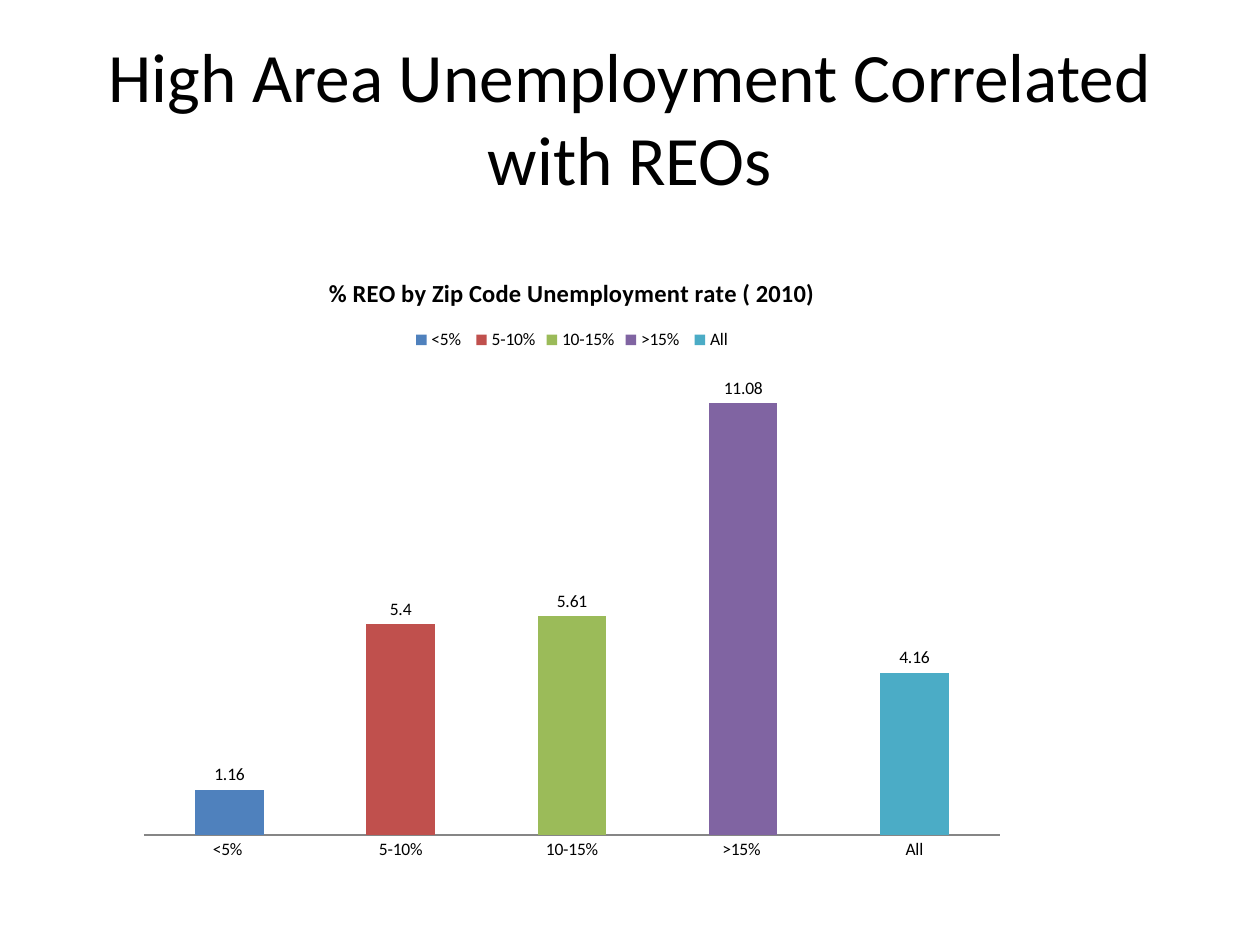
from pptx import Presentation
from pptx import util as u
from pptx.chart import data
from pptx.dml.color import RGBColor
from pptx.enum import chart as ch, text

BLACK = RGBColor(0, 0, 0)
GREY = RGBColor(0x86, 0x86, 0x86)
BARS = [
    ("<5% ", 1.16, RGBColor(0x4F, 0x81, 0xBD)),
    ("5-10%", 5.4, RGBColor(0xC0, 0x50, 0x4D)),
    ("10-15%", 5.61, RGBColor(0x9B, 0xBB, 0x59)),
    (">15% ", 11.08, RGBColor(0x80, 0x64, 0xA2)),
    ("All", 4.16, RGBColor(0x4B, 0xAC, 0xC6)),
]
FONT = "Calibri"


def style(font, size, bold=False):
    font.name = FONT
    font.size = u.Pt(size)
    font.bold = bold
    font.color.rgb = BLACK


prs = Presentation()
prs.slide_width, prs.slide_height = u.Cm(25.4), u.Cm(19.05)
slide = prs.slides.add_slide(prs.slide_layouts[5])

# Slide title
title = slide.shapes.title
title.left, title.top = u.Cm(1.27), u.Cm(0.76)
title.width, title.height = u.Cm(22.86), u.Cm(3.18)
frame = title.text_frame
frame.word_wrap = True
frame.vertical_anchor = text.MSO_ANCHOR.MIDDLE
para = frame.paragraphs[0]
para.alignment = text.PP_ALIGN.CENTER
run = para.add_run()
run.text = "High Area Unemployment Correlated with REOs"
style(run.font, 39.6)

# Column chart
rates = data.CategoryChartData()
rates.categories = [name for name, _, _ in BARS]
rates.add_series("Series 1", [rate for _, rate, _ in BARS])
chart = slide.shapes.add_chart(
    ch.XL_CHART_TYPE.COLUMN_CLUSTERED,
    u.Cm(2.54), u.Cm(5.08), u.Cm(17.98), u.Cm(12.5), rates).chart
style(chart.font, 10)

# Chart title and legend
chart.has_title = True
run = chart.chart_title.text_frame.paragraphs[0].add_run()
run.text = "% REO by Zip Code Unemployment rate ( 2010)"
style(run.font, 14, True)
chart.has_legend = True
chart.legend.position = ch.XL_LEGEND_POSITION.TOP
chart.legend.include_in_layout = False

# Axes
rows = chart.value_axis
rows.visible = False
rows.has_major_gridlines = False
rows.minimum_scale, rows.maximum_scale = 0, 12
cats = chart.category_axis
cats.major_tick_mark = ch.XL_TICK_MARK.NONE
cats.format.line.color.rgb = GREY

# Bars, one colour each, with value labels
plot = chart.plots[0]
plot.vary_by_categories = True
plot.gap_width, plot.overlap = 150, -25
plot.has_data_labels = True
labels = plot.data_labels
labels.show_value = True
labels.position = ch.XL_LABEL_POSITION.OUTSIDE_END
style(labels.font, 10)
for i, (_, _, shade) in enumerate(BARS):
    fill = plot.series[0].points[i].format.fill
    fill.solid()
    fill.fore_color.rgb = shade

prs.save("out.pptx")
